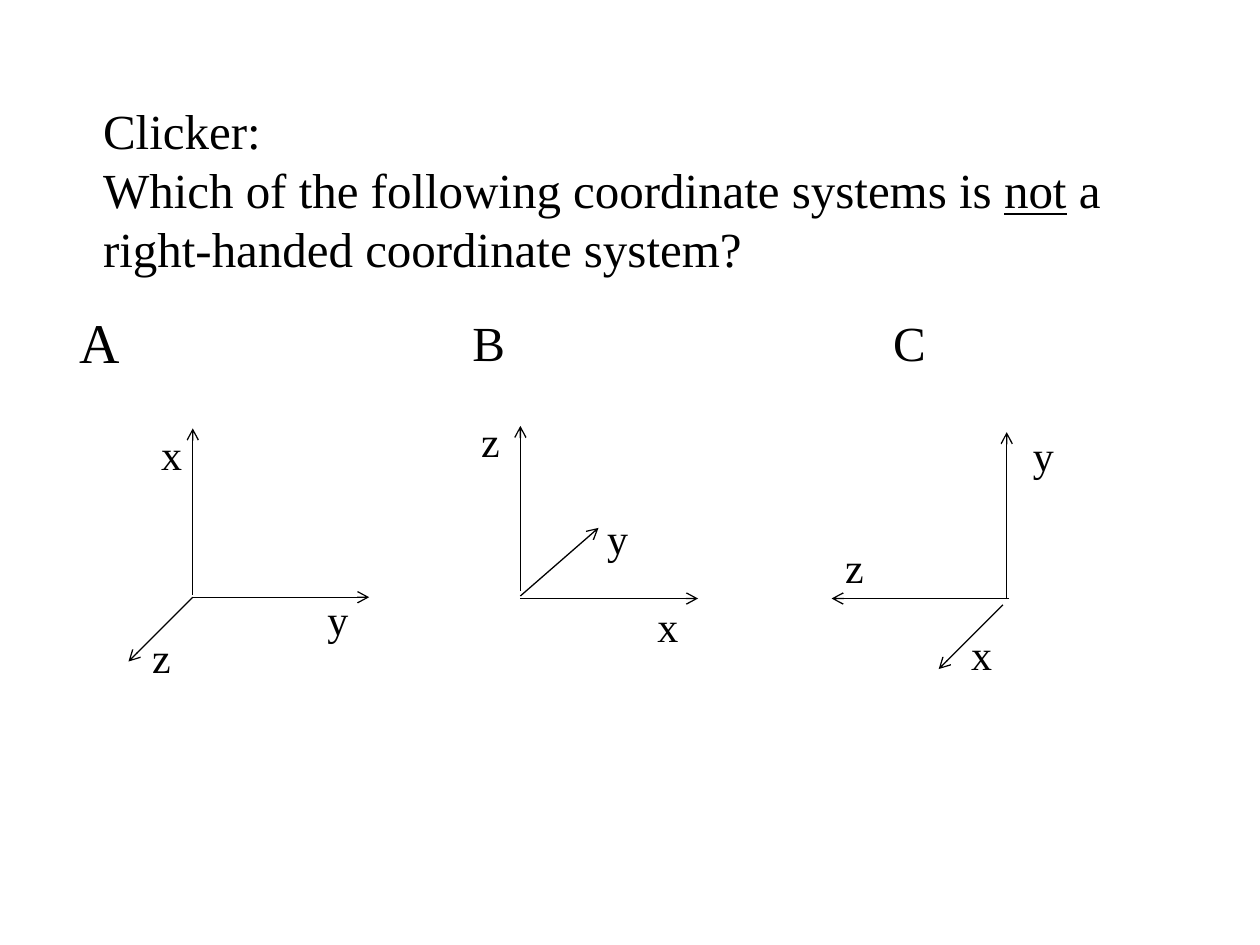
from lxml import etree
from pptx import Presentation
from pptx.dml.color import RGBColor
from pptx.enum.shapes import MSO_CONNECTOR
from pptx.enum.text import MSO_AUTO_SIZE
from pptx.oxml.ns import qn
from pptx.util import Inches, Pt

STRAIGHT = MSO_CONNECTOR.STRAIGHT
GROW = MSO_AUTO_SIZE.SHAPE_TO_FIT_TEXT
BLACK = RGBColor(0, 0, 0)
FONT = "Times New Roman"

prs = Presentation()
prs.slide_width, prs.slide_height = Inches(10), Inches(7.5)
s = prs.slides.add_slide(prs.slide_layouts[6])


def add_text(text, x, y, w=0.53, h=0.5, size=24, wrap=True):
    """Add a text box; newlines split paragraphs and _word_ is underlined."""
    tf = s.shapes.add_textbox(Inches(x), Inches(y), Inches(w), Inches(h)).text_frame
    tf.word_wrap = wrap
    tf.auto_size = GROW
    for i, line in enumerate(text.split("\n")):
        p = tf.add_paragraph() if i else tf.paragraphs[0]
        for j, part in enumerate(line.split("_")):
            r = p.add_run()
            r.text = part
            r.font.name = FONT
            r.font.size = Pt(size)
            r.font.color.rgb = BLACK
            if j % 2:
                r.font.underline = True


def add_arrow(x1, y1, x2, y2):
    c = s.shapes.add_connector(STRAIGHT, Inches(x1), Inches(y1), Inches(x2), Inches(y2))
    c.line.color.rgb = BLACK
    c.line.width = Pt(0.75)
    etree.SubElement(c.line._get_or_add_ln(), qn("a:tailEnd"), type="arrow")
    etree.SubElement(c._element.spPr, qn("a:effectLst"))


add_text("Clicker:\nWhich of the following coordinate systems is _not_ a "
         "right-handed coordinate system?", 0.72, 0.75, 8.21, 1.51, size=28)

# Each axis: arrow start and end, label, label position
axes = [
    # System A
    ((1.53, 4.74, 2.93, 4.74), "y", (2.5, 4.66)),
    ((1.53, 4.72, 1.53, 3.4), "x", (1.18, 3.35)),
    ((1.53, 4.74, 1.02, 5.25), "z", (1.11, 4.96)),
    # System B
    ((4.13, 4.75, 5.54, 4.75), "x", (5.12, 4.72)),
    ((4.13, 4.69, 4.13, 3.38), "z", (3.72, 3.25)),
    ((4.13, 4.73, 4.75, 4.19), "y", (4.72, 4.02)),
    # System C
    ((8.01, 4.75, 6.6, 4.75), "z", (6.61, 4.25)),
    ((7.99, 4.75, 7.99, 3.43), "y", (8.1, 3.36)),
    ((7.96, 4.8, 7.45, 5.31), "x", (7.61, 4.94)),
]
for ends, label, position in axes:
    add_arrow(*ends)
    add_text(label, *position)

add_text("A", 0.53, 2.39, 0.55, 0.64, size=32)
for letter, x in (("B", 3.65), ("C", 6.99)):
    add_text(letter, x, 2.43, 0.46, 0.57, size=28, wrap=False)

prs.save("out.pptx")
